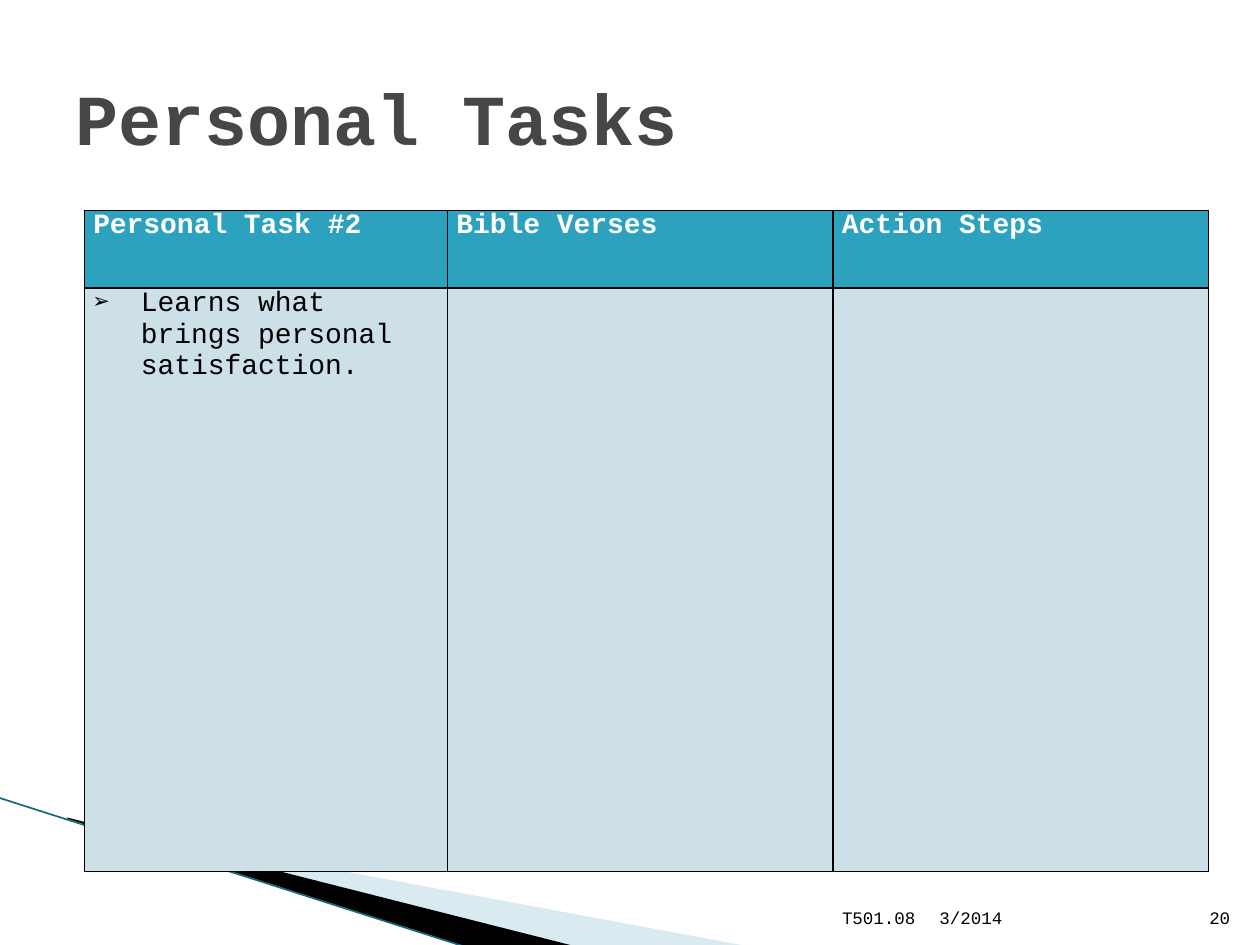
from lxml import etree
from pptx import Presentation
from pptx.dml.color import RGBColor
from pptx.enum.text import MSO_ANCHOR as Anchor, PP_ALIGN as Align
from pptx.oxml.ns import qn
from pptx.util import Cm, Pt

FONT = "Courier New"
BLACK, WHITE, TITLE_GREY = "000000", "FFFFFF", "464646"
TEAL, DARK_TEAL, PALE_TEAL, CELL_BLUE = "2DA2BF", "16697A", "A0CBDC", "CDE0E8"
HEADINGS = ["Personal Task #2", "Bible Verses", "Action Steps"]
TASK = "Learns what brings personal satisfaction."


def color(value):
    return RGBColor.from_string(value)


def fill_solid(target, value):
    target.fill.solid()
    target.fill.fore_color.rgb = color(value)


def format_paragraph(paragraph, text, fill, size, bold=False):
    paragraph.text = text
    formats = {"name": FONT, "size": Pt(size), "bold": bold}
    for name, value in formats.items():
        setattr(paragraph.runs[0].font, name, value)
    paragraph.runs[0].font.color.rgb = color(fill)


def add_text(slide, box, text, size, fill=BLACK, bold=False,
             align=Align.LEFT, anchor=Anchor.BOTTOM):
    frame = slide.shapes.add_textbox(*map(Cm, box)).text_frame
    frame.word_wrap = True
    frame.vertical_anchor = anchor
    frame.paragraphs[0].alignment = align
    format_paragraph(frame.paragraphs[0], text, fill, size, bold)


def add_wedge(slide, points, fill, opacity=100):
    corners = [(Cm(x), Cm(y)) for x, y in points]
    builder = slide.shapes.build_freeform(*corners[0])
    builder.add_line_segments(corners[1:], close=True)
    shape = builder.convert_to_shape()
    shape.shadow.inherit = False
    shape.line.fill.background()
    fill_solid(shape, fill)
    if opacity < 100:
        rgb = shape._element.spPr.find(".//" + qn("a:srgbClr"))
        etree.SubElement(rgb, qn("a:alpha"), val=str(opacity * 1000))


def add_line(slide, start, end, fill, width):
    line = slide.shapes.add_connector(1, *map(Cm, start + end))
    line.line.color.rgb = color(fill)
    line.line.width = Pt(width)
    etree.SubElement(line._element.spPr, qn("a:effectLst"))


def set_borders(cell, fill, width):
    properties = cell._tc.get_or_add_tcPr()
    for position, side in enumerate(("lnL", "lnR", "lnT", "lnB")):
        border = etree.Element(qn(f"a:{side}"), w=str(Pt(width)))
        solid = etree.SubElement(border, qn("a:solidFill"))
        etree.SubElement(solid, qn("a:srgbClr"), val=fill)
        properties.insert(position, border)


def add_bullet(paragraph, character, indent):
    properties = paragraph._p.get_or_add_pPr()
    properties.set("marL", str(Cm(indent)))
    properties.set("indent", str(-Cm(indent)))
    etree.SubElement(properties, qn("a:buFont"), typeface=FONT)
    etree.SubElement(properties, qn("a:buChar"), char=character)


def add_task_table(slide, left, top, widths, heights):
    table = slide.shapes.add_table(
        len(heights), len(widths), Cm(left), Cm(top),
        Cm(sum(widths)), Cm(sum(heights))).table
    for column, width in zip(table.columns, widths):
        column.width = Cm(width)
    for row, height, fill in zip(table.rows, heights, (TEAL, CELL_BLUE)):
        row.height = Cm(height)
        for cell in row.cells:
            margins = {"margin_left": 0.18, "margin_right": 0.18,
                       "margin_top": 0, "margin_bottom": 0}
            for name, value in margins.items():
                setattr(cell, name, Cm(value))
            fill_solid(cell, fill)
            set_borders(cell, BLACK, 1)
    for cell, heading in zip(table.rows[0].cells, HEADINGS):
        format_paragraph(cell.text_frame.paragraphs[0], heading, WHITE, 16, True)
    paragraph = table.cell(1, 0).text_frame.paragraphs[0]
    add_bullet(paragraph, "➢", 0.96)
    format_paragraph(paragraph, TASK, BLACK, 16)


def main():
    presentation = Presentation()
    presentation.slide_width, presentation.slide_height = Cm(25.4), Cm(19.05)
    slide = presentation.slides.add_slide(presentation.slide_layouts[6])

    # Corner decoration
    add_wedge(slide, [(1.4, 16.54), (15.11, 19.08), (11.58, 19.08), (1.4, 16.51)],
              PALE_TEAL, opacity=40)
    add_wedge(slide, [(1.35, 16.48), (11.61, 19.08), (9.45, 19.1), (1.37, 16.51)],
              BLACK)
    add_line(slide, (-0.03, 16.08), (9.42, 19.1), DARK_TEAL, 0.95)

    # Task table
    add_task_table(slide, 1.7, 4.24, [7.32, 7.77, 7.57], [1.57, 11.76])

    # Footer: date, course code and slide number
    add_text(slide, (18.69, 17.81, 5.33, 1.02), "3/2014", 10)
    add_text(slide, (12.17, 17.81, 6.53, 1.02), "T501.08", 10, align=Align.RIGHT)
    add_text(slide, (24.03, 17.81, 1.02, 1.02), "20", 10, align=Align.RIGHT)

    # Title
    add_text(slide, (1.27, 0.76, 22.86, 3.18), "Personal Tasks", 41,
             TITLE_GREY, bold=True, anchor=Anchor.MIDDLE)

    presentation.save("out.pptx")


if __name__ == "__main__":
    main()
